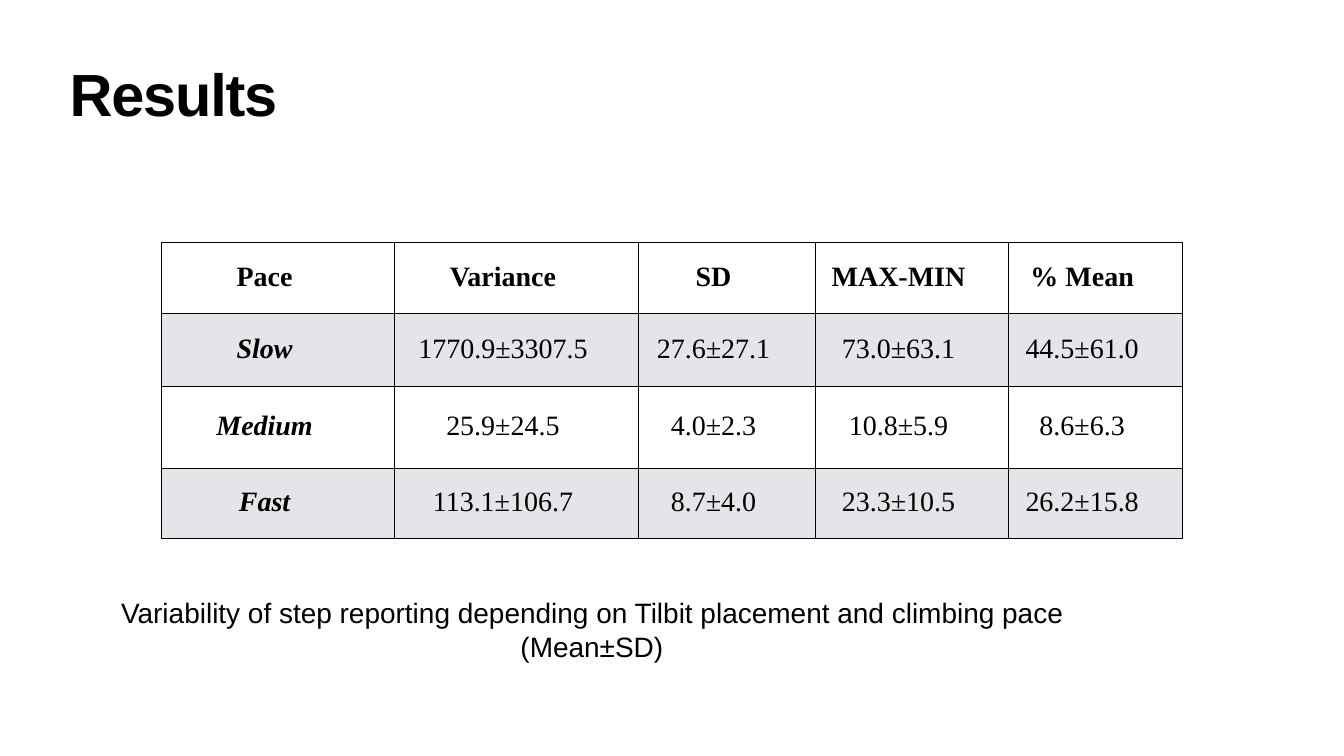
from lxml.etree import SubElement
from pptx import Presentation
from pptx.dml.color import RGBColor
from pptx.enum.text import MSO_ANCHOR as Anchor, MSO_AUTO_SIZE as AutoSize, PP_ALIGN as Align
from pptx.oxml import parse_xml
from pptx.oxml.ns import nsdecls
from pptx.util import Pt

PX = 9144  # 100 px to the inch
BLACK = RGBColor(0x00, 0x00, 0x00)
BAND = RGBColor(0xE3, 0xE5, 0xE8)


def format_span(span, font, size, bold=False, italic=False):
    span.font.name = font
    span.font.size = Pt(size)
    span.font.bold = bold
    span.font.italic = italic
    span.font.color.rgb = BLACK


def set_margins(frame, left, top, right, bottom):
    frame.margin_left, frame.margin_top = left * PX, top * PX
    frame.margin_right, frame.margin_bottom = right * PX, bottom * PX


deck = Presentation()
deck.slide_width, deck.slide_height = 2667 * PX, 1500 * PX
page = deck.slides.add_slide(deck.slide_layouts[5])

# Title
title = page.shapes.title
title.left, title.top, title.width, title.height = 132 * PX, 118 * PX, 2403 * PX, 157 * PX
frame = title.text_frame
frame.text = "Results"
frame.auto_size = AutoSize.NONE
frame.vertical_anchor = Anchor.MIDDLE
set_margins(frame, 6, 6, 6, 6)
para = frame.paragraphs[0]
para.alignment = Align.LEFT
para.line_spacing = 0.8
format_span(para.runs[0], "Arial", 85, bold=True)
para.runs[0].font._element.set("spc", "-170")

# Results table
ROWS = [
    ["Pace", "Variance", "SD", "MAX-MIN", "% Mean"],
    ["Slow", "1770.9±3307.5", "27.6±27.1", "73.0±63.1", "44.5±61.0"],
    ["Medium", "25.9±24.5", "4.0±2.3", "10.8±5.9", "8.6±6.3"],
    ["Fast", "113.1±106.7", "8.7±4.0", "23.3±10.5", "26.2±15.8"],
]
COLUMN_WIDTHS = [462, 484, 352, 382, 347]
ROW_HEIGHTS = [142, 144, 164, 138]
table = page.shapes.add_table(
    len(ROWS), len(COLUMN_WIDTHS), 320 * PX, 480 * PX,
    sum(COLUMN_WIDTHS) * PX, sum(ROW_HEIGHTS) * PX).table
table.horz_banding = False
for column, width in zip(table.columns, COLUMN_WIDTHS):
    column.width = width * PX
for row, height in zip(table.rows, ROW_HEIGHTS):
    row.height = height * PX

for r, values in enumerate(ROWS):
    for c, value in enumerate(values):
        cell = table.cell(r, c)
        cell.text_frame.text = value
        cell.vertical_anchor = Anchor.MIDDLE
        set_margins(cell, 7, 0, 59, 0)
        para = cell.text_frame.paragraphs[0]
        para.alignment = Align.CENTER
        para.line_spacing = 0.9
        para.space_before = Pt(45)
        format_span(para.runs[0], "Times New Roman", 40,
                    bold=r == 0 or c == 0, italic=r > 0 and c == 0)
        # Borders come before the fill in the cell properties
        properties = cell._tc.get_or_add_tcPr()
        for side in ("lnL", "lnR", "lnT", "lnB"):
            line = parse_xml(f'<a:{side} {nsdecls("a")} w="12700"><a:solidFill/></a:{side}>')
            SubElement(line[0], line[0].tag.replace("solidFill", "srgbClr"), val=str(BLACK))
            properties.append(line)
        if r % 2:
            cell.fill.solid()
            cell.fill.fore_color.rgb = BAND
        else:
            cell.fill.background()

# Caption
caption = page.shapes.add_textbox(227 * PX, 1175 * PX, 2213 * PX, 148 * PX)
frame = caption.text_frame
frame.text = "Variability of step reporting depending on Tilbit placement and climbing pace (Mean±SD)"
frame.word_wrap = True
frame.vertical_anchor = Anchor.MIDDLE
set_margins(frame, 6, 6, 324, 6)
para = frame.paragraphs[0]
para.alignment = Align.CENTER
para.space_before = Pt(4)
format_span(para.runs[0], "Arial", 40)

deck.save("out.pptx")
